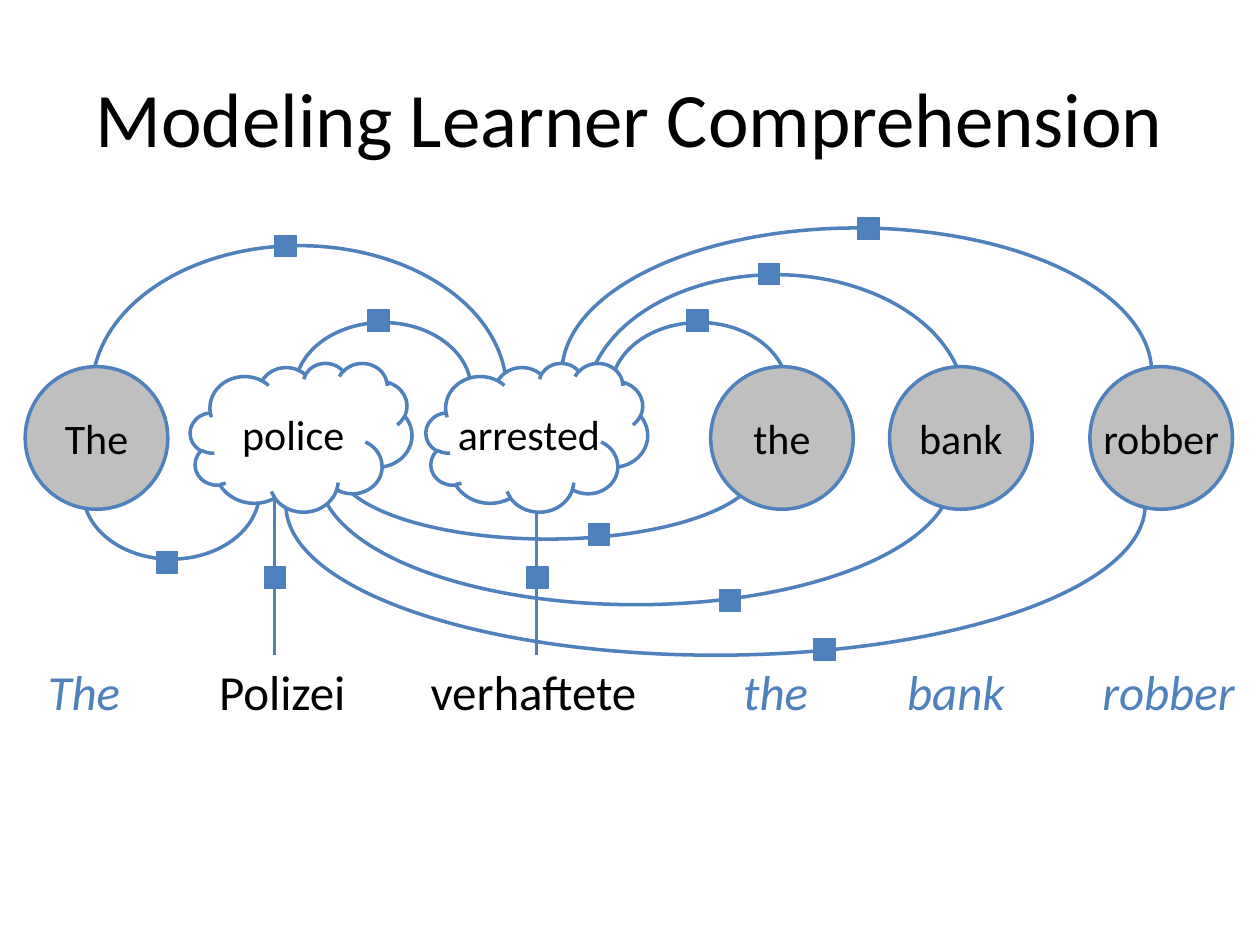
"""Build the slide that models learner comprehension as a factor graph."""
from dataclasses import dataclass

from pptx import Presentation
from pptx.dml.color import RGBColor
from pptx.enum.shapes import MSO_CONNECTOR as Connector, MSO_SHAPE as Shape
from pptx.enum.text import MSO_ANCHOR as Anchor, MSO_AUTO_SIZE as AutoSize, PP_ALIGN as Align
from pptx.oxml.ns import qn
from pptx.oxml.xmlchemy import OxmlElement
from pptx.util import Pt


@dataclass(frozen=True)
class Theme:
    """Hold the colours, type sizes and line widths of the slide."""
    font: str = "Calibri"
    black: RGBColor = RGBColor(0x00, 0x00, 0x00)
    white: RGBColor = RGBColor(0xFF, 0xFF, 0xFF)
    blue: RGBColor = RGBColor(0x4F, 0x81, 0xBD)
    edge: RGBColor = RGBColor(0x4B, 0x7E, 0xBC)
    grey: RGBColor = RGBColor(0xBF, 0xBF, 0xBF)
    title: int = 44
    label: int = 28
    node: int = 24
    stroke: float = 2
    thin: float = 0.75


THEME = Theme()
UPPER_START, LOWER_START, WIDE_START = 108.985, 108.985, 107.067
NODE_TOP, NODE_SIZE = 209.5, 81.5
CLOUD_TOP, CLOUD_WIDTH, CLOUD_HEIGHT = 207.4, 126.7, 85
LABEL_TOP, LABEL_HEIGHT = 374.4, 41
FACTOR_SIZE = 12.2
PLAIN_FRAME = {"margin_left": 0, "margin_right": 0, "margin_top": 0, "margin_bottom": 0,
               "word_wrap": False, "vertical_anchor": Anchor.MIDDLE}

LOWER_ARCS = [(163.4, 203, 491, 171.4, WIDE_START),
              (192.2, 223.9, 241.9, 84.2, LOWER_START),
              (182.2, 196.6, 362.2, 149, LOWER_START),
              (47.5, 242.6, 100.8, 77, LOWER_START)]
UPPER_ARCS = [(321.1, 130.3, 337, 165.6), (349.2, 184.3, 100.8, 77),
              (334.8, 157, 216.7, 149), (52.6, 140.4, 236.9, 165.6),
              (168.5, 184.3, 100.8, 77)]
UPPER_FACTORS = [(490.3, 124.6), (433.4, 150.5), (392.4, 177.1), (210.2, 177.1), (157, 134.6)]
STEM_FACTORS = [(301, 324), (151.2, 324)]
LOWER_FACTORS = [(465.1, 365), (411.1, 337), (336.2, 299.5), (89.3, 315.4)]
LABELS = [("The", 20.2, 63.4, True), ("Polizei", 118.1, 88.6, False),
          ("verhaftete", 239, 134.6, False), ("the", 417.6, 59, True),
          ("bank", 511.2, 77.8, True), ("robber", 622.8, 97.9, True)]
NODES = [("robber", 622.8), ("bank", 508.3), ("the", 406.1), ("The", 14.4)]


def apply_format(target, values):
    """Set each named attribute on the target."""
    for name, value in values.items():
        setattr(target, name, value)


def write_text(box, text, size, frame_values, align, colour=THEME.black, italic=False):
    """Write one formatted paragraph into a box."""
    apply_format(box.text_frame, frame_values)
    para = box.text_frame.paragraphs[0]
    para.alignment = align
    span = para.add_run()
    span.text = text
    apply_format(span.font, {"name": THEME.font, "size": Pt(size), "italic": italic})
    span.font.color.rgb = colour


def add_outline(page, kind, left, top, width, height, fill=None, line=THEME.blue,
                weight=THEME.stroke):
    """Add a preset shape with a line and an optional fill."""
    shape = page.shapes.add_shape(kind, Pt(left), Pt(top), Pt(width), Pt(height))
    shape.shadow.inherit = False
    if fill is None:
        shape.fill.background()
    else:
        shape.fill.solid()
        shape.fill.fore_color.rgb = fill
    shape.line.color.rgb = line
    shape.line.width = Pt(weight)
    return shape


def add_arc(page, left, top, width, height, start=UPPER_START, below=False):
    """Add a half-ellipse link, mirrored when it hangs below the nodes."""
    arc = add_outline(page, Shape.ARC, left, top, width, height)
    arc.adjustments[0] = start
    arc.adjustments[1] = 0
    if below:
        arc._element.spPr.find(qn("a:xfrm")).set("flipV", "1")


def add_factors(page, places, line=THEME.edge):
    """Add a small factor square at each place."""
    for left, top in places:
        add_outline(page, Shape.RECTANGLE, left, top, FACTOR_SIZE, FACTOR_SIZE,
                    THEME.blue, line, THEME.thin)


def add_node(page, text, left):
    """Add a grey circle that holds an observed word."""
    node = add_outline(page, Shape.OVAL, left, NODE_TOP, NODE_SIZE, NODE_SIZE, THEME.grey)
    write_text(node, text, THEME.node, PLAIN_FRAME, Align.CENTER)


def add_cloud(page, text, left):
    """Add a white cloud that holds a guessed word."""
    cloud = add_outline(page, Shape.CLOUD, left, CLOUD_TOP, CLOUD_WIDTH, CLOUD_HEIGHT,
                        THEME.white)
    write_text(cloud, text, THEME.node, PLAIN_FRAME, Align.CENTER)


def add_stem(page, across, top):
    """Add a vertical line down to the label row."""
    stem = page.shapes.add_connector(Connector.STRAIGHT, Pt(across), Pt(top),
                                     Pt(across), Pt(LABEL_TOP))
    stem.line.color.rgb = THEME.blue
    stem.line.width = Pt(THEME.stroke)
    stem._element.spPr.append(OxmlElement("a:effectLst"))


def add_title(page, text):
    """Add the centred slide title."""
    box = page.shapes.add_textbox(Pt(36), Pt(21.6), Pt(648), Pt(90))
    write_text(box, text, THEME.title,
               {"word_wrap": True, "vertical_anchor": Anchor.MIDDLE}, Align.CENTER)


def add_label(page, text, left, width, known):
    """Add a sentence word, blue and italic when it is known."""
    box = page.shapes.add_textbox(Pt(left), Pt(LABEL_TOP), Pt(width), Pt(LABEL_HEIGHT))
    write_text(box, text, THEME.label,
               {"word_wrap": False, "auto_size": AutoSize.SHAPE_TO_FIT_TEXT},
               Align.LEFT, THEME.blue if known else THEME.black, known)


def main():
    """Build and save the deck."""
    deck = Presentation()
    apply_format(deck, {"slide_width": Pt(720), "slide_height": Pt(540)})
    page = deck.slides.add_slide(deck.slide_layouts[6])
    for arc in LOWER_ARCS:
        add_arc(page, *arc, below=True)
    for arc in UPPER_ARCS:
        add_arc(page, *arc)
    add_factors(page, UPPER_FACTORS)
    add_title(page, "Modeling Learner Comprehension")
    for label in LABELS:
        add_label(page, *label)
    add_stem(page, 306.7, 293)
    for node in NODES:
        add_node(page, *node)
    add_stem(page, 157, 278.6)
    add_cloud(page, "arrested", 243.4)
    add_factors(page, STEM_FACTORS)
    add_factors(page, LOWER_FACTORS, THEME.blue)
    add_cloud(page, "police", 108.7)
    deck.save("out.pptx")


if __name__ == "__main__":
    main()
